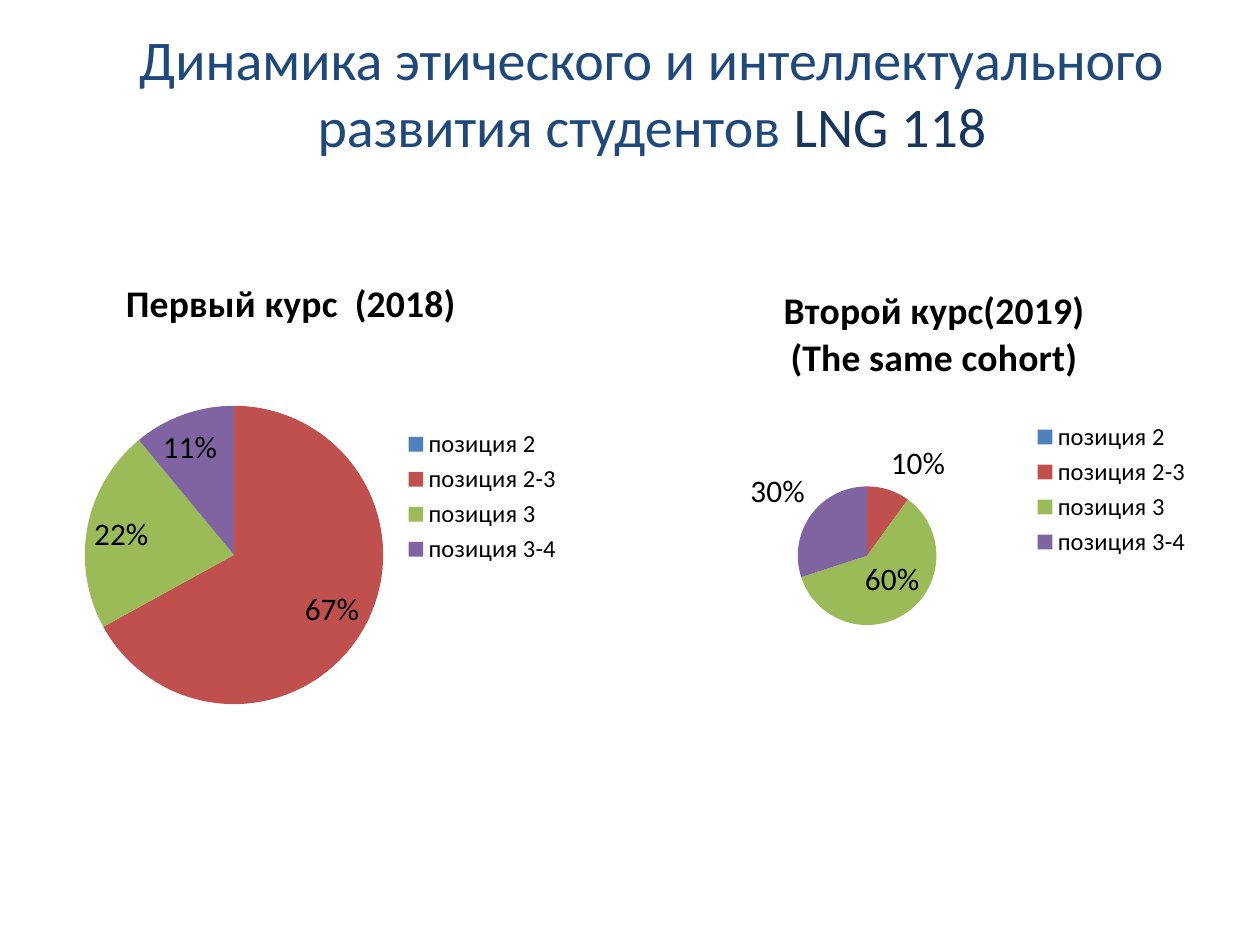
import pptx
import pptx.chart.data
import pptx.dml.color
import pptx.enum.chart
import pptx.enum.text
import pptx.oxml
import pptx.oxml.ns
import pptx.util

Inches, Pt = pptx.util.Inches, pptx.util.Pt
RGBColor = pptx.dml.color.RGBColor
chart_enum = pptx.enum.chart

FONT = "Calibri"
BLACK = RGBColor(0, 0, 0)
BLUE = RGBColor(0x1F, 0x49, 0x7D)
NAVY = RGBColor(0x17, 0x37, 0x5E)
SLICES = [RGBColor(0x4F, 0x81, 0xBD), RGBColor(0xC0, 0x50, 0x4D),
          RGBColor(0x9B, 0xBB, 0x59), RGBColor(0x80, 0x64, 0xA2)]

# Content: places are left, top, width, height in inches on the slide
TITLE = [("Динамика этического и интеллектуального развития студентов ", BLUE),
         ("LNG 118", NAVY)]
LEVELS = ["позиция 2", "позиция 2-3", "позиция 3", "позиция 3-4"]
PIES = [
    {"title": "Первый курс  (2018)", "values": [0, 67, 22, 11],
     "frame": (0.06, 2.01, 4.5, 3.87), "pie": (0.67, 3.22, 2.37, 2.37),
     "legend": (3.18, 3.37, 1.3, 1.15)},
    {"title": "Второй курс(2019)\n(The same cohort)", "values": [0, 10, 60, 30],
     "frame": (5.29, 2.11, 4.25, 3.53), "pie": (6.33, 3.86, 1.1, 1.1),
     "legend": (8.17, 3.31, 1.3, 1.15)},
]


def style(font, size, color=BLACK, bold=False):
    font.name, font.size, font.bold = FONT, Pt(size), bold
    font.color.rgb = color


def make(tag, body):
    return pptx.oxml.parse_xml(
        f'<c:{tag} {pptx.oxml.ns.nsdecls("c")}>{body}</c:{tag}>')


def layout(place, frame, inner=False):
    """Turn a place on the slide into fractions of the chart frame."""
    left, top, wide, high = frame
    x, y, w, h = place
    parts = {"x": (x - left) / wide, "y": (y - top) / high,
             "w": w / wide, "h": h / high}
    body = '<c:layoutTarget val="inner"/>' if inner else ""
    body += "".join(f'<c:{k}Mode val="edge"/>' for k in "xy")
    body += "".join(f'<c:{k} val="{v:.3f}"/>' for k, v in parts.items())
    return make("layout", f"<c:manualLayout>{body}</c:manualLayout>")


def add_pie(slide, item):
    data = pptx.chart.data.CategoryChartData()
    data.categories = LEVELS
    data.add_series("Series 1", item["values"])
    frame = item["frame"]
    chart = slide.shapes.add_chart(
        chart_enum.XL_CHART_TYPE.PIE, *map(Inches, frame), data).chart
    style(chart.font, 17.9)

    # Heading
    chart.has_title = True
    text = chart.chart_title.text_frame
    text.text = item["title"]
    for para in text.paragraphs:
        for run in para.runs:
            style(run.font, 21.5, bold=True)

    # Legend
    chart.has_legend = True
    legend = chart.legend
    legend.position = chart_enum.XL_LEGEND_POSITION.RIGHT
    legend.include_in_layout = False
    style(legend.font, 14)
    node = legend._element
    for old in node.findall(pptx.oxml.ns.qn("c:layout")):
        node.remove(old)
    node.find(pptx.oxml.ns.qn("c:legendPos")).addnext(
        layout(item["legend"], frame))

    # Slices and labels
    plot = chart.plots[0]
    plot.vary_by_categories = True
    series = plot.series[0]
    for i, color in enumerate(SLICES):
        fill = series.points[i].format.fill
        fill.solid()
        fill.fore_color.rgb = color
    labels = series.data_labels
    labels.show_percentage = True
    labels.show_value = False
    labels.number_format = "0%"
    labels.number_format_is_linked = False
    labels.position = chart_enum.XL_LABEL_POSITION.BEST_FIT
    style(labels.font, 17.9)
    for i, value in reversed(list(enumerate(item["values"]))):
        if value == 0:
            labels._element.insert(0, make(
                "dLbl", f'<c:idx val="{i}"/><c:delete val="1"/>'))

    # Pie size
    area = chart._chartSpace.chart.plotArea
    for old in area.findall(pptx.oxml.ns.qn("c:layout")):
        area.remove(old)
    area.insert(0, layout(item["pie"], frame, inner=True))


def main():
    deck = pptx.Presentation()
    deck.slide_width, deck.slide_height = Inches(10), Inches(7.5)
    slide = deck.slides.add_slide(deck.slide_layouts[6])

    # Title
    box = slide.shapes.add_textbox(
        Inches(0.7), Inches(0.23), Inches(8.95), Inches(0.99))
    text = box.text_frame
    text.word_wrap = True
    text.vertical_anchor = pptx.enum.text.MSO_ANCHOR.MIDDLE
    para = text.paragraphs[0]
    para.alignment = pptx.enum.text.PP_ALIGN.CENTER
    for words, color in TITLE:
        run = para.add_run()
        run.text = words
        style(run.font, 32, color)

    for item in PIES:
        add_pie(slide, item)
    deck.save("out.pptx")


if __name__ == "__main__":
    main()
